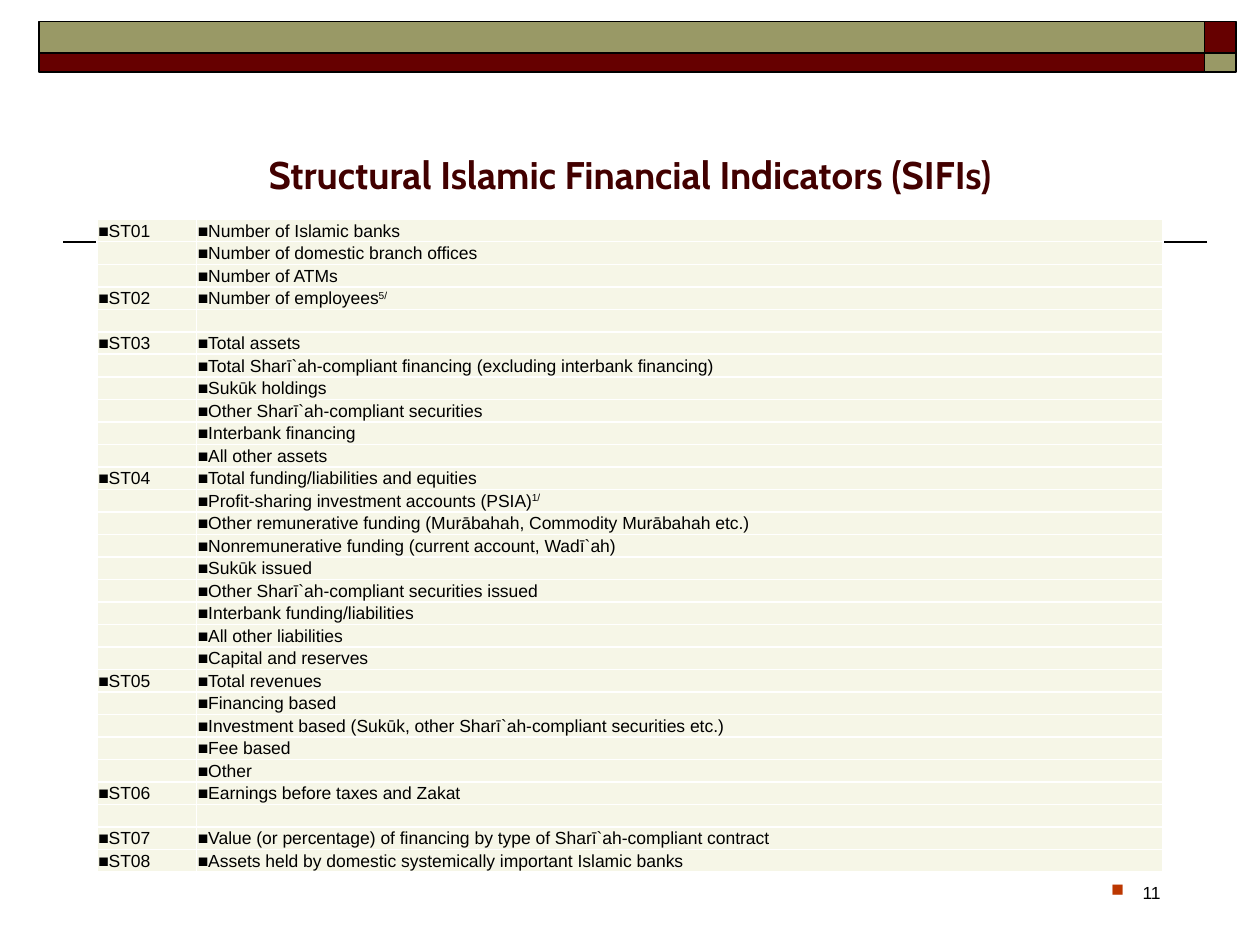
from dataclasses import dataclass

from lxml.etree import SubElement
from pptx import Presentation
from pptx.dml.color import RGBColor
from pptx.enum.shapes import MSO_CONNECTOR, MSO_SHAPE
from pptx.enum.text import MSO_ANCHOR, PP_ALIGN
from pptx.oxml.ns import qn
from pptx.util import Inches, Pt


@dataclass(frozen=True)
class Theme:
    maroon: str = "660000"
    olive: str = "999966"
    title: str = "420000"
    cell: str = "F6F6E7"
    border: str = "FFFFFF"
    ink: str = "000000"
    accent: str = "BC3700"
    title_font: str = "Cabin"
    body_font: str = "Arial"
    title_size: int = 22
    body_size: int = 10


theme = Theme()


def style_run(span, font, size, color, bold=False):
    span.font.name = font
    span.font.size = Pt(size)
    span.font.bold = bold
    span.font.color.rgb = RGBColor.from_string(color)


def add_bullet(para, color, font, character, indent=0):
    properties = para._p.get_or_add_pPr()
    properties.set("marL", str(Inches(indent)))
    properties.set("indent", str(-Inches(indent)))
    bullet_color = SubElement(properties, qn("a:buClr"))
    SubElement(bullet_color, qn("a:srgbClr"), val=color)
    SubElement(properties, qn("a:buFont"), typeface=font)
    SubElement(properties, qn("a:buChar"), char=character)


indicators = [
    ("ST01", "Number of Islamic banks"),
    ("", "Number of domestic branch offices"),
    ("", "Number of ATMs"),
    ("ST02", "Number of employees^5/"),
    ("", ""),
    ("ST03", "Total assets"),
    ("", "Total Sharī`ah-compliant financing (excluding interbank financing)"),
    ("", "Sukūk holdings"),
    ("", "Other Sharī`ah-compliant securities"),
    ("", "Interbank financing"),
    ("", "All other assets"),
    ("ST04", "Total funding/liabilities and equities"),
    ("", "Profit-sharing investment accounts (PSIA)^1/"),
    ("", "Other remunerative funding (Murābahah, Commodity Murābahah etc.)"),
    ("", "Nonremunerative funding (current account, Wadī`ah)"),
    ("", "Sukūk issued"),
    ("", "Other Sharī`ah-compliant securities issued"),
    ("", "Interbank funding/liabilities"),
    ("", "All other liabilities"),
    ("", "Capital and reserves"),
    ("ST05", "Total revenues"),
    ("", "Financing based"),
    ("", "Investment based (Sukūk, other Sharī`ah-compliant securities etc.)"),
    ("", "Fee based"),
    ("", "Other"),
    ("ST06", "Earnings before taxes and Zakat"),
    ("", ""),
    ("ST07", "Value (or percentage) of financing by type of Sharī`ah-compliant contract"),
    ("ST08", "Assets held by domestic systemically important Islamic banks"),
]
justified_rows = range(12, 19)

deck = Presentation()
deck.slide_width = Inches(10)
deck.slide_height = Inches(7.5)
page = deck.slides.add_slide(deck.slide_layouts[5])

rule = page.shapes.add_connector(
    MSO_CONNECTOR.STRAIGHT, Inches(9.58), Inches(1.92), Inches(0.5), Inches(1.92)
)
rule.line.color.rgb = RGBColor.from_string(theme.ink)
rule.line.width = Pt(1)
SubElement(rule._element.spPr, qn("a:effectLst"))

for left, top, width, height, color in [
    (9.56, 0.17, 0.25, 0.25, theme.maroon),
    (0.31, 0.17, 9.25, 0.25, theme.olive),
    (0.31, 0.42, 9.25, 0.15, theme.maroon),
    (9.56, 0.42, 0.25, 0.15, theme.olive),
]:
    band = page.shapes.add_shape(
        MSO_SHAPE.RECTANGLE, Inches(left), Inches(top), Inches(width), Inches(height)
    )
    band.shadow.inherit = False
    band.fill.solid()
    band.fill.fore_color.rgb = RGBColor.from_string(color)
    band.line.color.rgb = RGBColor.from_string(theme.ink)
    band.line.width = Pt(1)

title = page.shapes.title
title.left, title.top = Inches(0.69), Inches(1.11)
title.width, title.height = Inches(8.62), Inches(0.54)
title.text_frame.text = "Structural Islamic Financial Indicators (SIFIs)"
title.text_frame.vertical_anchor = MSO_ANCHOR.MIDDLE
para = title.text_frame.paragraphs[0]
para.alignment = PP_ALIGN.CENTER
style_run(para.runs[0], theme.title_font, theme.title_size, theme.title, bold=True)

table = page.shapes.add_table(
    len(indicators), 2, Inches(0.77), Inches(1.74), Inches(8.46), Inches(5.18)
).table
table.first_row = False
table.horz_banding = False
table.columns[0].width = Inches(0.79)
table.columns[1].width = Inches(7.67)

for row_index, texts in enumerate(indicators):
    table.rows[row_index].height = Inches(5.18 / len(indicators))
    for column_index, text in enumerate(texts):
        cell = table.cell(row_index, column_index)
        cell.margin_left = cell.margin_right = cell.margin_top = Inches(0.01)
        cell.margin_bottom = 0
        cell.vertical_anchor = MSO_ANCHOR.MIDDLE
        cell_properties = cell._tc.get_or_add_tcPr()
        for side in ("lnL", "lnR", "lnT", "lnB"):
            edge = SubElement(cell_properties, qn(f"a:{side}"), w=str(Pt(1)))
            edge_fill = SubElement(edge, qn("a:solidFill"))
            SubElement(edge_fill, qn("a:srgbClr"), val=theme.border)
        cell.fill.solid()
        cell.fill.fore_color.rgb = RGBColor.from_string(theme.cell)

        para = cell.text_frame.paragraphs[0]
        if not text:
            SubElement(para._p, qn("a:endParaRPr"), sz=str(theme.body_size * 100))
            continue
        if column_index == 1 and row_index in justified_rows:
            para.alignment = PP_ALIGN.JUSTIFY
        add_bullet(para, theme.ink, theme.body_font, "■")
        label, _, note = text.partition("^")
        para.text = label
        if note:
            mark = para.add_run()
            mark.text = note
            mark._r.get_or_add_rPr().set("baseline", "30000")
        for span in para.runs:
            style_run(span, theme.body_font, theme.body_size, theme.ink)

number_box = page.shapes.add_textbox(Inches(7.06), Inches(6.95), Inches(2.25), Inches(0.4))
number_box.text_frame.word_wrap = True
number_box.text_frame.text = "11"
para = number_box.text_frame.paragraphs[0]
para.alignment = PP_ALIGN.RIGHT
add_bullet(para, theme.accent, "Wingdings", "n", 0.25)
style_run(para.runs[0], theme.body_font, theme.body_size, theme.ink)

deck.save("out.pptx")
